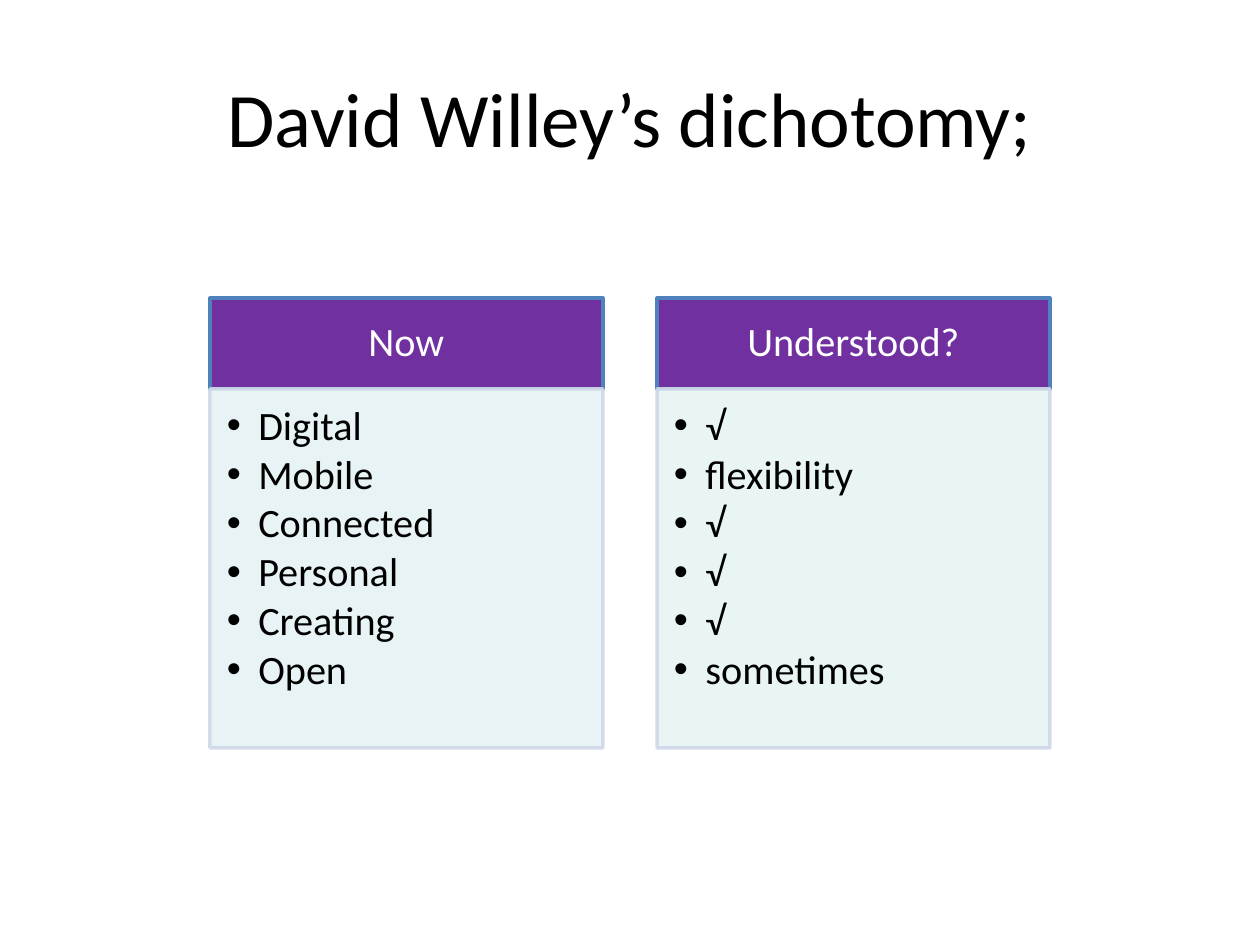
from lxml.etree import SubElement
from pptx import Presentation
from pptx.dml.color import RGBColor
from pptx.enum.shapes import MSO_SHAPE
from pptx.enum.text import MSO_ANCHOR, PP_ALIGN
from pptx.oxml.ns import qn
from pptx.util import Pt

COLORS = {
    "text": "000000",
    "header_text": "FFFFFF",
    "header_fill": "7030A0",
    "header_line": "4F81BD",
    "body_fill": "E7F3F4",
    "body_line": "D0D8E8",
}
FONT = "Calibri"
HEADER_HEIGHT = 51.84
COLUMNS = [
    ("Now", ["Digital", "Mobile", "Connected", "Personal", "Creating", "Open"], 100),
    ("Understood?", ["√", "flexibility", "√", "√", "√", "sometimes"], 90),
]


def color(name):
    return RGBColor.from_string(COLORS[name])


def set_opacity(properties, percent):
    for color_element in properties.iter(qn("a:srgbClr")):
        SubElement(color_element, qn("a:alpha"), val=str(percent * 1000))


def set_margins(text_frame, left, top, right, bottom):
    text_frame.margin_left, text_frame.margin_top = Pt(left), Pt(top)
    text_frame.margin_right, text_frame.margin_bottom = Pt(right), Pt(bottom)


def format_text(text_frame, size, color_name, alignment, anchor):
    text_frame.word_wrap = True
    text_frame.vertical_anchor = anchor
    for paragraph in text_frame.paragraphs:
        paragraph.alignment = alignment
        for run in paragraph.runs:
            run.font.size = Pt(size)
            run.font.name = FONT
            run.font.color.rgb = color(color_name)


def add_bullet(paragraph):
    properties = paragraph._p.get_or_add_pPr()
    properties.set("marL", str(Pt(18)))
    properties.set("indent", str(-Pt(18)))
    SubElement(properties, qn("a:buFont"), typeface="Arial")
    SubElement(properties, qn("a:buChar"), char="•")


def add_panel(slide, box, fill_name, line_name):
    shape = slide.shapes.add_shape(MSO_SHAPE.RECTANGLE, *map(Pt, box))
    shape.shadow.inherit = False
    shape.fill.solid()
    shape.fill.fore_color.rgb = color(fill_name)
    shape.line.color.rgb = color(line_name)
    shape.line.width = Pt(2)
    return shape


def add_title(slide, box, text):
    text_frame = slide.shapes.add_textbox(*map(Pt, box)).text_frame
    text_frame.text = text
    format_text(text_frame, 44, "text", PP_ALIGN.CENTER, MSO_ANCHOR.MIDDLE)


def add_header(slide, box, text):
    text_frame = add_panel(slide, box, "header_fill", "header_line").text_frame
    text_frame.text = text
    set_margins(text_frame, 13, 7.2, 13, 7.2)
    format_text(text_frame, 23, "header_text", PP_ALIGN.CENTER, MSO_ANCHOR.MIDDLE)
    text_frame.paragraphs[0].line_spacing = 0.9


def add_body(slide, box, items, opacity):
    shape = add_panel(slide, box, "body_fill", "body_line")
    set_opacity(shape.line._get_or_add_ln(), 90)
    if opacity < 100:
        set_opacity(shape._element.spPr.find(qn("a:solidFill")), opacity)
    text_frame = shape.text_frame
    text_frame.text = "\n".join(items)
    set_margins(text_frame, 9.6, 9.6, 13, 14.4)
    format_text(text_frame, 23, "text", PP_ALIGN.LEFT, MSO_ANCHOR.TOP)
    for paragraph in text_frame.paragraphs:
        paragraph.line_spacing = 0.9
        paragraph.space_after = Pt(3)
        add_bullet(paragraph)


def add_column(slide, box, heading, items, opacity):
    left, top, width, height = box
    add_header(slide, (left, top, width, HEADER_HEIGHT), heading)
    body_box = (left, top + HEADER_HEIGHT, width, height - HEADER_HEIGHT)
    add_body(slide, body_box, items, opacity)


def add_columns(slide, box, gap):
    left, top, width, height = box
    column_width = (width - gap * (len(COLUMNS) - 1)) / len(COLUMNS)
    for index, column in enumerate(COLUMNS):
        column_left = left + index * (column_width + gap)
        add_column(slide, (column_left, top, column_width, height), *column)


def main():
    presentation = Presentation()
    presentation.slide_width = Pt(720)
    presentation.slide_height = Pt(540)
    slide = presentation.slides.add_slide(presentation.slide_layouts[6])
    add_title(slide, (36, 21.6, 648, 90), "David Willey’s dichotomy;")
    add_columns(slide, (120, 170.4, 480, 257), 31)
    presentation.save("out.pptx")


if __name__ == "__main__":
    main()
